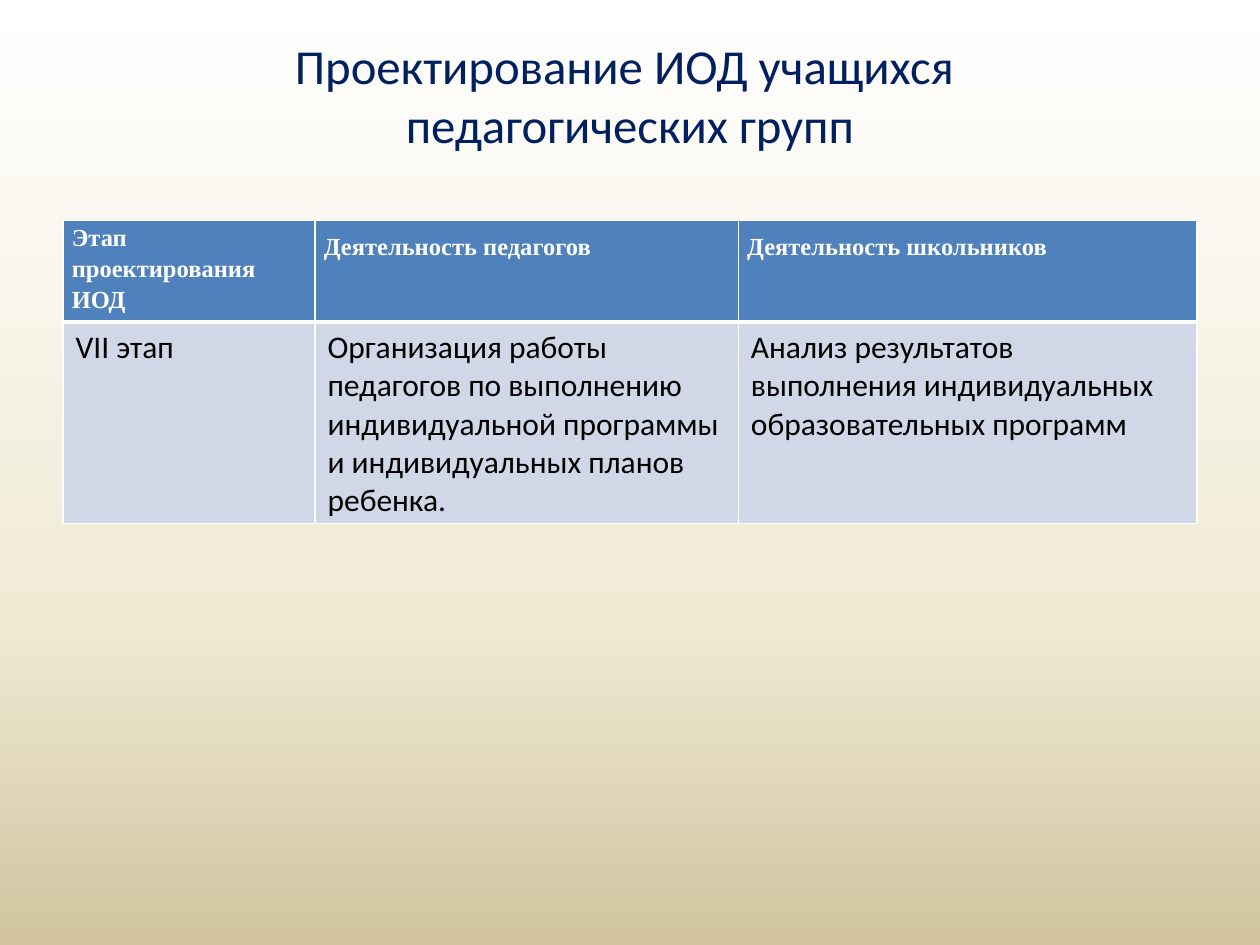
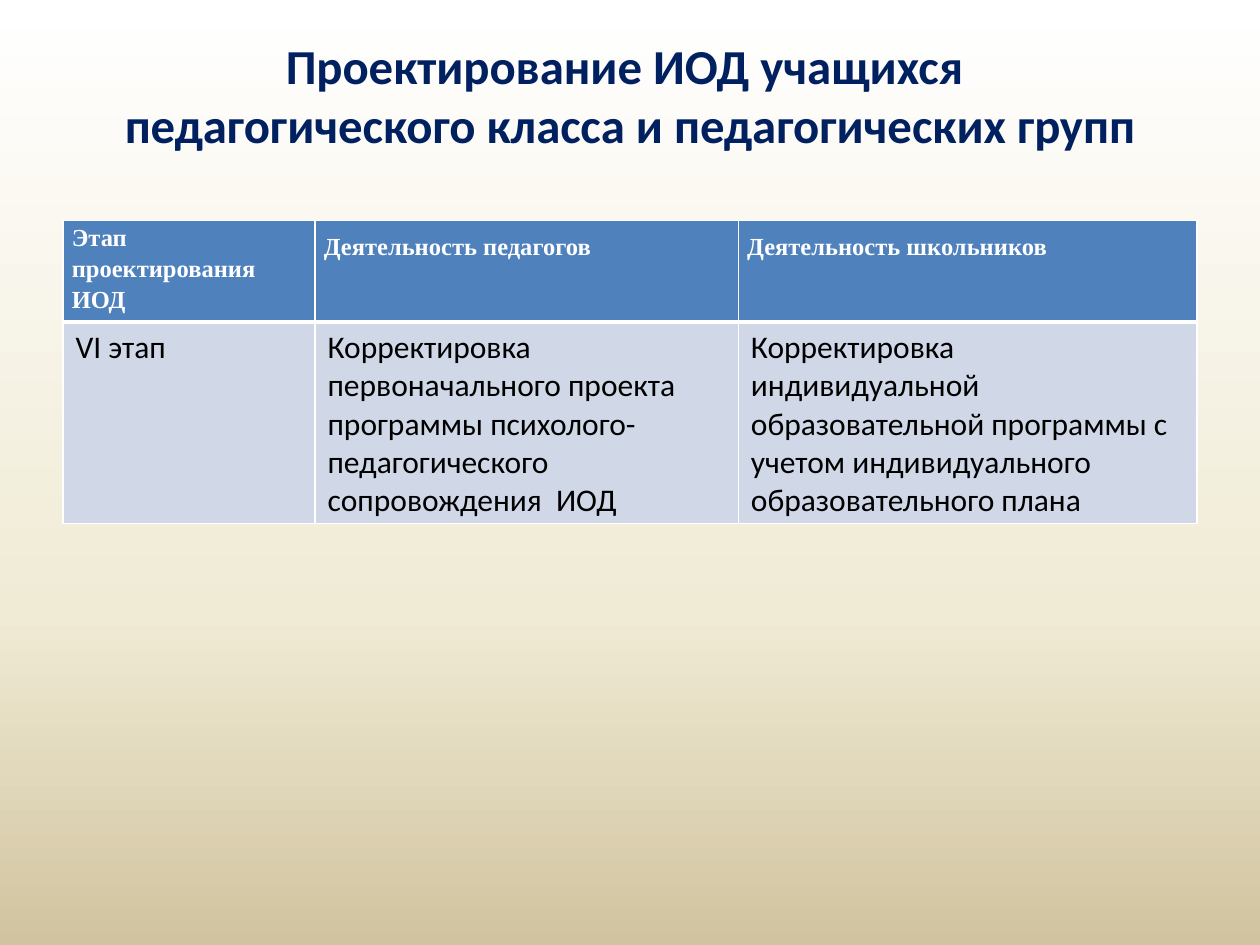
from dataclasses import dataclass

from lxml import etree
from pptx import Presentation
from pptx.dml.color import RGBColor
from pptx.enum.text import MSO_ANCHOR, PP_ALIGN
from pptx.oxml.ns import qn
from pptx.util import Inches, Pt

LEFT, MID, JUST = PP_ALIGN.LEFT, PP_ALIGN.CENTER, PP_ALIGN.JUSTIFY
TOP, CENTER = MSO_ANCHOR.TOP, MSO_ANCHOR.MIDDLE

# Shared look
SANS, SERIF = "Calibri", "Times New Roman"
NAVY, BLUE, PALE = "002060", "4F81BD", "D0D8E8"
WHITE, BLACK = "FFFFFF", "000000"
STOPS = ((0, WHITE), (65, "F0EBD5"), (100, "D1C39F"))

# Grid of half-inch units: 20 columns by 15 rows
UNIT = Inches(0.5)
COLS, ROWS = 20, 15
SIDE, SPAN = 1, 18
TITLE_TOP, TITLE_ROWS, TITLE_PAD = 0.6, 3, 1.2
TABLE_TOP = 3.5
WIDTHS = (4, 6.72, 7.28)
HEIGHTS = (1.6, 3.2)

THIN, THICK = 1, 3
HEAD = ("Этап проектирования ИОД", "Деятельность педагогов ",
        "Деятельность школьников ")


@dataclass(frozen=True)
class Stage:
    title: str
    bold: bool
    cells: tuple[str, str, str]


@dataclass(frozen=True)
class Band:
    fill: str
    pad: tuple[float, float]
    edges: dict[str, int]
    font: dict


HEAD_BAND = Band(BLUE, (0.07, 0), dict(L=THIN, R=THIN, T=THIN, B=THICK),
                 dict(face=SERIF, size=14, color=WHITE, bold=True, align=JUST))
BODY_BAND = Band(PALE, (0.1, 0.05), dict(L=THIN, R=THIN, T=THICK, B=THIN),
                 dict(size=18))

STAGES = (
    Stage("Проектирование ИОД учащихся \vпедагогических групп", False,
          ("VII этап",
           "Организация работы педагогов по выполнению индивидуальной "
           "программы и индивидуальных планов ребенка.",
           "Анализ результатов выполнения индивидуальных "
           "образовательных программ")),
    Stage("Проектирование ИОД учащихся \vпедагогического класса и "
          "педагогических групп", True,
          ("VI этап",
           "Корректировка первоначального проекта программы "
           "психолого-педагогического сопровождения  ИОД",
           "Корректировка индивидуальной образовательной программы с "
           "учетом индивидуального образовательного плана")),
)


def units(count: float) -> int:
    return round(count * UNIT)


def rgb(code: str) -> RGBColor:
    return RGBColor.from_string(code)


def write(frame, text: str, *, face: str = SANS, size: float = 18,
          color: str = BLACK, bold: bool = False, align=LEFT,
          space: float = 1.0) -> None:
    para = frame.paragraphs[0]
    para.text = text
    para.alignment = align
    para.line_spacing = space
    for run in para.runs:
        font = run.font
        font.name, font.size, font.bold = face, Pt(size), bold
        font.color.rgb = rgb(color)


def add_node(root, tag: str, **attrs: str):
    return etree.SubElement(root, qn(tag), attrs)


def paint_back(master) -> None:
    fill = master.background.fill
    fill.gradient()
    fill.gradient_angle = 270
    stops = master.element.find(".//" + qn("a:gsLst"))
    for old in list(stops):
        stops.remove(old)
    for share, code in STOPS:
        stop = add_node(stops, "a:gs", pos=str(share * 1000))
        add_node(stop, "a:srgbClr", val=code)


def add_title(slide, stage: Stage) -> None:
    box = slide.shapes.add_textbox(units(SIDE), units(TITLE_TOP),
                                   units(SPAN), units(TITLE_ROWS))
    frame = box.text_frame
    frame.word_wrap = True
    frame.vertical_anchor = CENTER
    frame.margin_top, frame.margin_bottom = 0, units(TITLE_PAD)
    write(frame, stage.title, size=27.9, color=NAVY, bold=stage.bold,
          align=MID)


def draw_cell(cell, text: str, band: Band, space: float) -> None:
    across, down = (Inches(pad) for pad in band.pad)
    cell.margin_left = cell.margin_right = across
    cell.margin_top = cell.margin_bottom = down
    cell.vertical_anchor = TOP
    write(cell.text_frame, text, space=space, **band.font)
    # Edges must come before the fill
    props = cell._tc.get_or_add_tcPr()
    for side, width in band.edges.items():
        line = add_node(props, "a:ln" + side, w=str(Pt(width)))
        add_node(add_node(line, "a:solidFill"), "a:srgbClr", val=WHITE)
    cell.fill.solid()
    cell.fill.fore_color.rgb = rgb(band.fill)


def add_stage(slide, stage: Stage) -> None:
    table = slide.shapes.add_table(
        len(HEIGHTS), len(WIDTHS), units(SIDE), units(TABLE_TOP),
        units(SPAN), units(sum(HEIGHTS))).table
    table.horz_banding = False
    for col, width in zip(table.columns, WIDTHS):
        col.width = units(width)
    for row, height in zip(table.rows, HEIGHTS):
        row.height = units(height)
    parts = ((HEAD, HEAD_BAND, (1.15, 1.5, 1.5)),
             (stage.cells, BODY_BAND, (1.0, 1.0, 1.0)))
    for row, (texts, band, gaps) in zip(table.rows, parts):
        for cell, text, gap in zip(row.cells, texts, gaps):
            draw_cell(cell, text, band, gap)


def main() -> None:
    prs = Presentation()
    prs.slide_width, prs.slide_height = units(COLS), units(ROWS)
    paint_back(prs.slide_master)
    blank = prs.slide_layouts[6]
    for stage in STAGES:
        slide = prs.slides.add_slide(blank)
        add_title(slide, stage)
        add_stage(slide, stage)
    prs.save("out.pptx")


if __name__ == "__main__":
    main()
